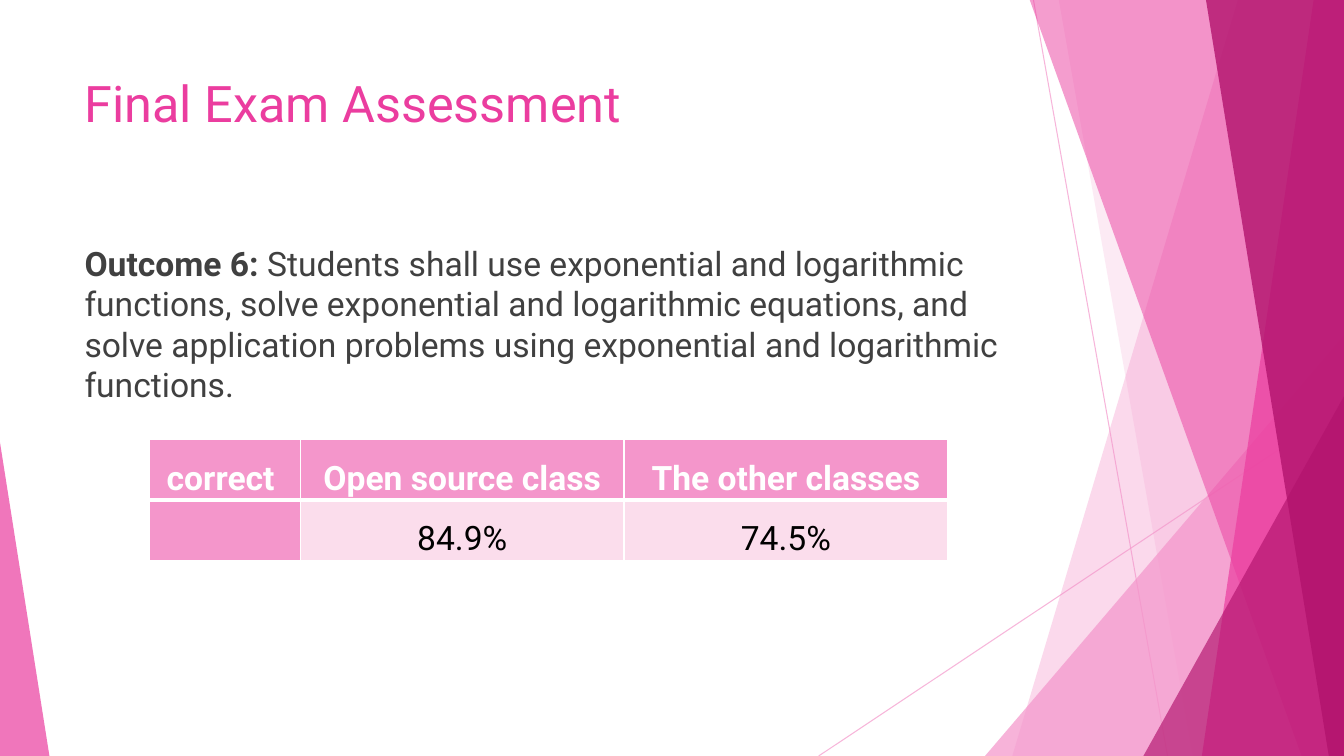
"""Build the final exam assessment slide."""
from dataclasses import dataclass
from typing import Any

from lxml.etree import SubElement
from pptx import Presentation
from pptx.dml.color import RGBColor
from pptx.enum.shapes import MSO_CONNECTOR, MSO_SHAPE
from pptx.enum.text import PP_ALIGN
from pptx.oxml.ns import qn
from pptx.util import Inches, Pt


@dataclass(frozen=True)
class Theme:
    font: str = "Roboto"
    rose: str = "F496CB"
    pink: str = "EB3D9F"
    plum: str = "B2136D"
    pale: str = "FBDDEC"
    gray: str = "404040"
    white: str = "FFFFFF"
    black: str = "000000"
    head: int = 36
    body: int = 24


@dataclass(frozen=True)
class Ray:
    start: tuple[float, float]
    end: tuple[float, float]


@dataclass(frozen=True)
class Band:
    top: float
    foot: float
    color: str
    alpha: int


@dataclass(frozen=True)
class Wedge:
    left: float
    width: float
    height: float
    apex: int
    color: str
    alpha: int


@dataclass(frozen=True)
class Run:
    text: str
    size: int
    color: str
    bold: bool = False


THEME = Theme()
WIDE, HIGH, EDGE = 13.33, 7.5, -0.01
RAYS = [Ray((10.25, 0), (11.58, HIGH)), Ray((WIDE, 4.03), (8.12, HIGH))]
FACETS = [
    Band(12.28, 10.04, THEME.rose, 36),
    Band(10.5, 11.83, THEME.rose, 20),
    Wedge(9.77, 3.56, 4.17, 1, THEME.rose, 72),
    Band(10.21, 12.91, THEME.pink, 50),
    Band(13.03, 11.92, THEME.pink, 70),
    Band(11.96, 13.18, THEME.plum, 80),
    Wedge(11.34, 1.99, 3.57, 1, THEME.plum, 66),
    Wedge(0, 0.49, 3.11, 0, THEME.pink, 70),
]
TITLE = [Run("Final Exam Assessment", THEME.head, THEME.pink)]
GOAL = [
    Run("Outcome 6: ", THEME.body, THEME.gray, True),
    Run("Students shall use exponential and logarithmic functions, solve exponential "
        "and logarithmic equations, and solve application problems using exponential "
        "and logarithmic functions.", THEME.body, THEME.gray),
]
ROWS = [["correct ", "Open source class", "The other classes"], ["", "84.9%", "74.5%"]]
COLS = [1.5, 3.21, 3.21]


def apply(target: Any, form: dict[str, Any]) -> None:
    """Set each attribute named in the format."""
    for name, value in form.items():
        setattr(target, name, value)


def fade(shape: Any, alpha: int) -> None:
    """Make the colours of a shape partly clear."""
    for color in shape.element.spPr.iter(qn("a:srgbClr")):
        SubElement(color, qn("a:alpha"), val=str(alpha * 1000))


def draw_ray(slide: Any, ray: Ray) -> None:
    """Draw one thin line."""
    ends = [Inches(n) for n in (*ray.start, *ray.end)]
    line = slide.shapes.add_connector(MSO_CONNECTOR.STRAIGHT, *ends)
    line.line.color.rgb = RGBColor.from_string(THEME.rose)
    line.line.width = Pt(0.75)
    fade(line, 70)
    SubElement(line.element.spPr, qn("a:effectLst"))


def draw_facet(slide: Any, facet: Band | Wedge) -> None:
    """Draw one clear band or wedge."""
    if isinstance(facet, Band):
        pen = slide.shapes.build_freeform(Inches(facet.top), Inches(EDGE))
        rest = [(WIDE, EDGE), (WIDE, HIGH), (facet.foot, HIGH)]
        pen.add_line_segments([(Inches(x), Inches(y)) for x, y in rest])
        shape = pen.convert_to_shape()
    else:
        box = (facet.left, HIGH - facet.height, facet.width, facet.height)
        shape = slide.shapes.add_shape(MSO_SHAPE.ISOSCELES_TRIANGLE, *map(Inches, box))
        shape.adjustments[0] = facet.apex
    shape.shadow.inherit = False
    shape.fill.solid()
    shape.fill.fore_color.rgb = RGBColor.from_string(facet.color)
    shape.line.fill.background()
    fade(shape, facet.alpha)


def write(para: Any, runs: list[Run]) -> None:
    """Add styled runs to a paragraph."""
    for run in runs:
        part = para.add_run()
        part.text = run.text
        apply(part.font, {"name": THEME.font, "size": Pt(run.size), "bold": run.bold})
        part.font.color.rgb = RGBColor.from_string(run.color)


def draw_text(slide: Any, top: float, height: float, runs: list[Run], gap: int = 0) -> None:
    """Draw a wrapped text box."""
    box = slide.shapes.add_textbox(*map(Inches, (0.74, top, 9.4, height)))
    box.text_frame.word_wrap = True
    para = box.text_frame.paragraphs[0]
    para.space_before = Pt(gap)
    write(para, runs)


def frame(cell: Any, base: int) -> None:
    """Rule the four sides of a cell in white."""
    props = cell._tc.get_or_add_tcPr()
    for side, width in {"L": 1, "R": 1, "T": 1, "B": base}.items():
        line = SubElement(props, qn(f"a:ln{side}"), w=str(Pt(width)))
        SubElement(SubElement(line, qn("a:solidFill")), qn("a:srgbClr"), val=THEME.white)


def draw_table(slide: Any) -> None:
    """Draw the table of scores."""
    box = map(Inches, (1.48, 4.36, sum(COLS), 1.16))
    table = slide.shapes.add_table(len(ROWS), len(COLS), *box).table
    apply(table, {"first_row": False, "horz_banding": False})
    for col, width in zip(table.columns, COLS):
        col.width = Inches(width)
    for r, row in enumerate(ROWS):
        for c, text in enumerate(row):
            cell, head = table.cell(r, c), r == 0
            side = Inches(0.07)
            apply(cell, {"margin_left": side, "margin_right": side,
                         "margin_top": 0, "margin_bottom": 0})
            frame(cell, 3 if head else 1)
            cell.fill.solid()
            fill = THEME.rose if head or c == 0 else THEME.pale
            cell.fill.fore_color.rgb = RGBColor.from_string(fill)
            if text:
                para = cell.text_frame.paragraphs[0]
                apply(para, {"alignment": PP_ALIGN.CENTER, "line_spacing": 1.5})
                ink = THEME.white if head else THEME.black
                write(para, [Run(text, THEME.body, ink, head)])


def main() -> None:
    """Build and save the deck."""
    deck = Presentation()
    apply(deck, {"slide_width": Inches(WIDE), "slide_height": Inches(HIGH)})
    slide = deck.slides.add_slide(deck.slide_layouts[6])
    for ray in RAYS:
        draw_ray(slide, ray)
    for facet in FACETS:
        draw_facet(slide, facet)
    draw_text(slide, 0.67, 1.44, TITLE)
    draw_text(slide, 2.36, 4.24, GOAL, 10)
    draw_table(slide)
    deck.save("out.pptx")


if __name__ == "__main__":
    main()
